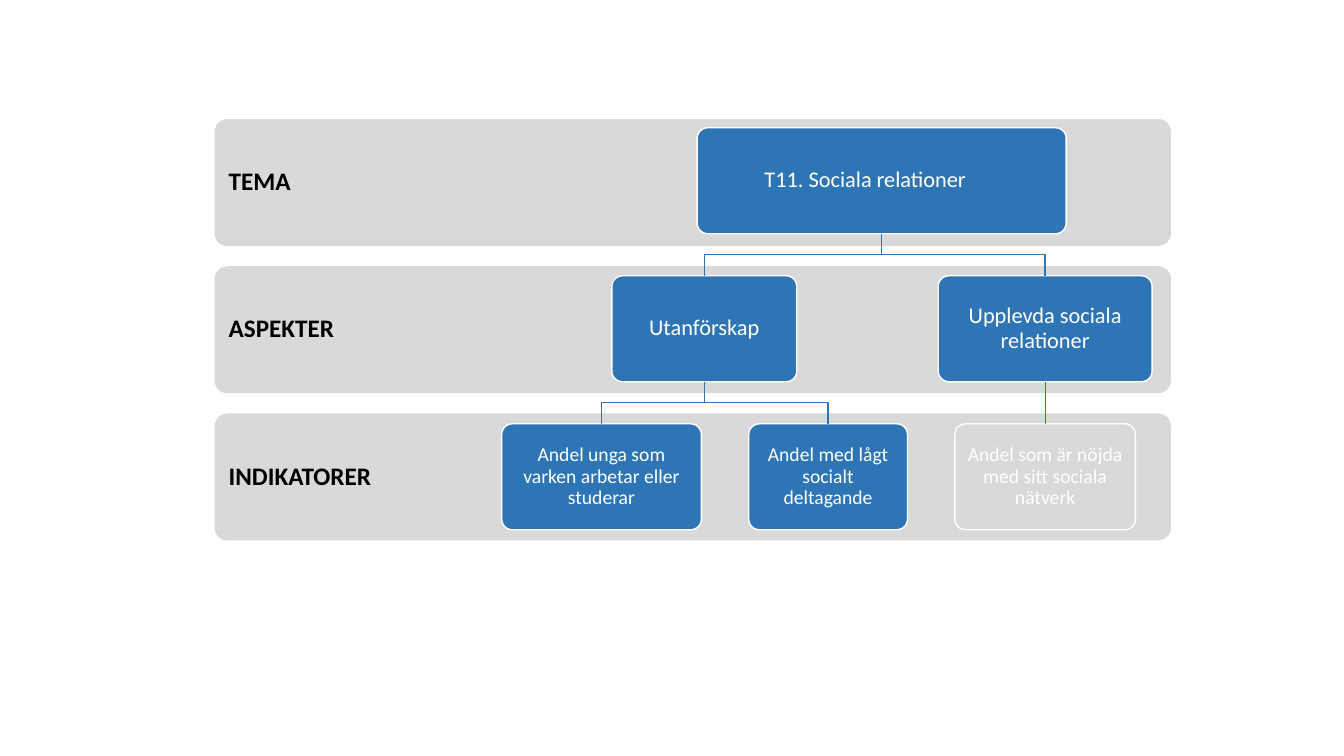
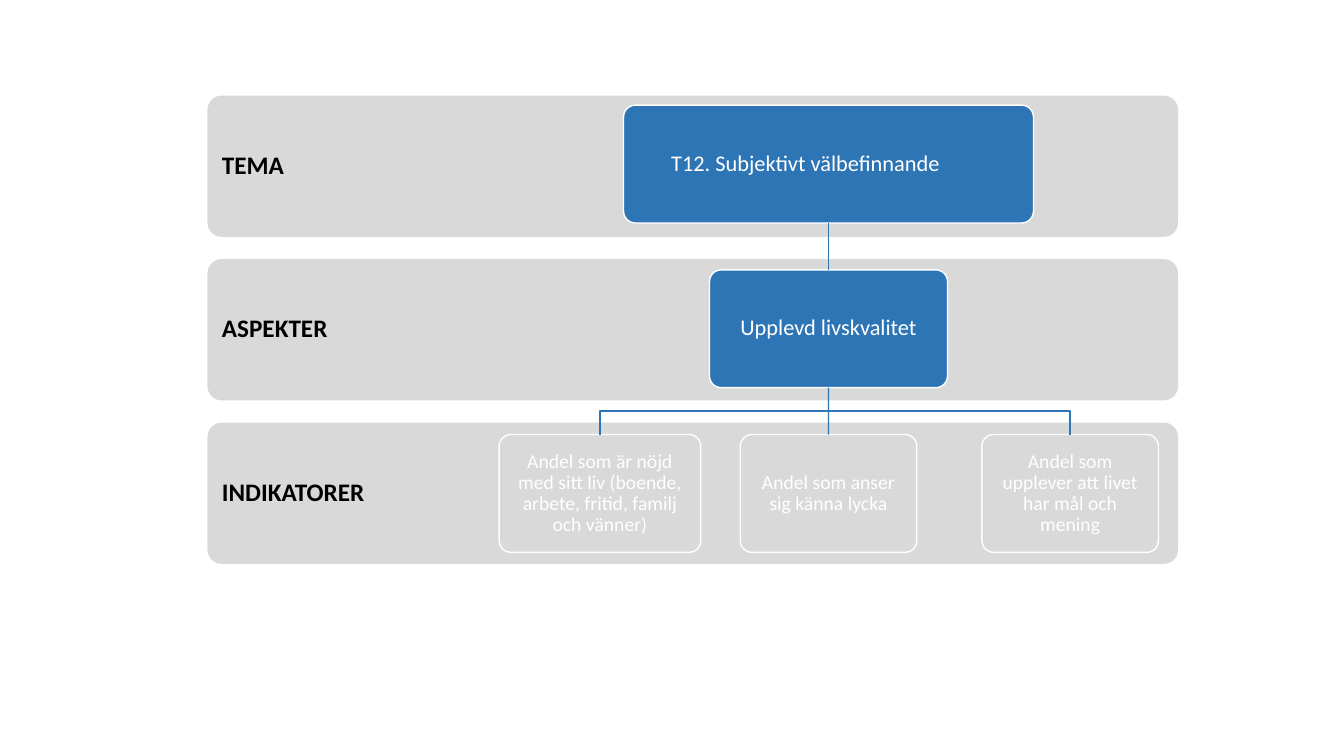
"""Build two slides that break a theme down into aspects and indicators."""
from dataclasses import dataclass
from lxml.etree import SubElement
from pptx import Presentation
from pptx.dml.color import RGBColor
from pptx.enum.shapes import MSO_CONNECTOR, MSO_SHAPE
from pptx.enum.text import MSO_ANCHOR, PP_ALIGN
from pptx.oxml.ns import qn
from pptx.util import Cm, Pt


@dataclass(frozen=True)
class Theme:
    font: str = "Calibri"
    band: RGBColor = RGBColor(0xD9, 0xD9, 0xD9)
    blue: RGBColor = RGBColor(0x2E, 0x75, 0xB6)
    white: RGBColor = RGBColor(0xFF, 0xFF, 0xFF)
    black: RGBColor = RGBColor(0x00, 0x00, 0x00)
    label_size: int = 18
    box_sizes: tuple = (16, 16, 14)
    box_insets: tuple = (0.18, 0.18, 0.15)
    label_inset: float = 0.26
    line_width: int = 1
    spacing: float = 0.9


THEME = Theme()
LEVELS = ("TEMA", "ASPEKTER", "INDIKATORER")

SLIDES = [
    {
        "band": {"left": 5.41, "top": 3.0, "width": 24.1, "height": 3.2, "pitch": 3.71},
        "box": {"top": 3.22, "height": 2.67, "pitch": 3.73},
        "theme_offset": 0.83,
        "nodes": [
            # level, parent, centre, width, filled, text
            (0, None, 22.22, 9.3, True, "T11. Sociala relationer"),
            (1, 0, 17.75, 4.66, True, "Utanförskap"),
            (1, 0, 26.34, 5.39, True, "Upplevda sociala relationer"),
            (2, 1, 15.16, 5.03, True, "Andel unga som varken arbetar eller studerar"),
            (2, 1, 20.87, 4.0, True, "Andel med lågt socialt deltagande"),
            (2, 2, 26.34, 4.55, False, "Andel som är nöjda med sitt sociala nätverk"),
        ],
    },
    {
        "band": {"left": 5.23, "top": 2.41, "width": 24.46, "height": 3.56, "pitch": 4.12},
        "box": {"top": 2.65, "height": 2.97, "pitch": 4.15},
        "theme_offset": 1.16,
        "nodes": [
            (0, None, 20.88, 10.33, True, "T12. Subjektivt välbefinnande"),
            (1, 0, 20.88, 6.0, True, "Upplevd livskvalitet"),
            (2, 1, 15.12, 5.08, False,
             "Andel som är nöjd med sitt liv (boende, arbete, fritid, familj och vänner)"),
            (2, 1, 20.88, 4.45, False, "Andel som anser sig känna lycka"),
            (2, 1, 26.97, 4.45, False, "Andel som upplever att livet har mål och mening"),
        ],
    },
]


def write_text(shape, text, *, size, color, inset, bold=False,
               align=PP_ALIGN.CENTER, extra_right=0):
    frame = shape.text_frame
    frame.word_wrap = True
    frame.vertical_anchor = MSO_ANCHOR.MIDDLE
    frame.margin_left = frame.margin_top = frame.margin_bottom = Cm(inset)
    frame.margin_right = Cm(inset + extra_right)
    para = frame.paragraphs[0]
    para.alignment = align
    para.line_spacing = THEME.spacing
    span = para.add_run()
    span.text = text
    span.font.name = THEME.font
    span.font.size = Pt(size)
    span.font.bold = bold
    span.font.color.rgb = color


def add_panel(page, left, top, width, height, *, fill=None, outline=None):
    panel = page.shapes.add_shape(
        MSO_SHAPE.ROUNDED_RECTANGLE, Cm(left), Cm(top), Cm(width), Cm(height))
    panel.adjustments[0] = 0.1
    panel.shadow.inherit = False
    if fill is None:
        panel.fill.background()
    else:
        panel.fill.solid()
        panel.fill.fore_color.rgb = fill
    if outline is None:
        panel.line.fill.background()
    else:
        panel.line.color.rgb = outline
        panel.line.width = Pt(THEME.line_width)
    return panel


deck = Presentation()
deck.slide_width, deck.slide_height = Cm(33.87), Cm(19.05)

for content in SLIDES:
    page = deck.slides.add_slide(deck.slide_layouts[6])
    band, box = content["band"], content["box"]

    for level, label in enumerate(LEVELS):
        panel = add_panel(page, band["left"], band["top"] + level * band["pitch"],
                          band["width"], band["height"], fill=THEME.band)
        write_text(panel, label, size=THEME.label_size, color=THEME.black,
                   inset=THEME.label_inset, bold=True, align=PP_ALIGN.LEFT)

    boxes = []
    for level, parent, centre, width, filled, text in content["nodes"]:
        panel = add_panel(page, centre - width / 2, box["top"] + level * box["pitch"],
                          width, box["height"],
                          fill=THEME.blue if filled else None, outline=THEME.white)
        write_text(panel, text, size=THEME.box_sizes[level], color=THEME.white,
                   inset=THEME.box_insets[level],
                   extra_right=content["theme_offset"] if level == 0 else 0)
        boxes.append(panel)
        if parent is None:
            continue

        start = content["nodes"][parent][2]
        top = box["top"] + (level - 1) * box["pitch"] + box["height"]
        bottom = box["top"] + level * box["pitch"]
        straight = start == centre
        connector = page.shapes.add_connector(
            MSO_CONNECTOR.STRAIGHT if straight else MSO_CONNECTOR.ELBOW,
            Cm(start), Cm(top), Cm(centre), Cm(bottom))
        connector.begin_connect(boxes[parent], 2)
        connector.end_connect(panel, 0)
        connector.line.color.rgb = THEME.blue
        connector.line.width = Pt(THEME.line_width)
        properties = connector._element.spPr
        SubElement(properties, qn("a:effectLst"))
        if not straight:
            drop, reach = bottom - top, abs(centre - start)
            connector.left = Cm((start + centre - drop) / 2)
            connector.top = Cm((top + bottom - reach) / 2)
            connector.width, connector.height = Cm(drop), Cm(reach)
            transform = properties.find(qn("a:xfrm"))
            transform.attrib.pop("flipH", None)
            transform.set("rot", "5400000" if centre < start else "16200000")
            if centre > start:
                transform.set("flipH", "1")

deck.save("out.pptx")
